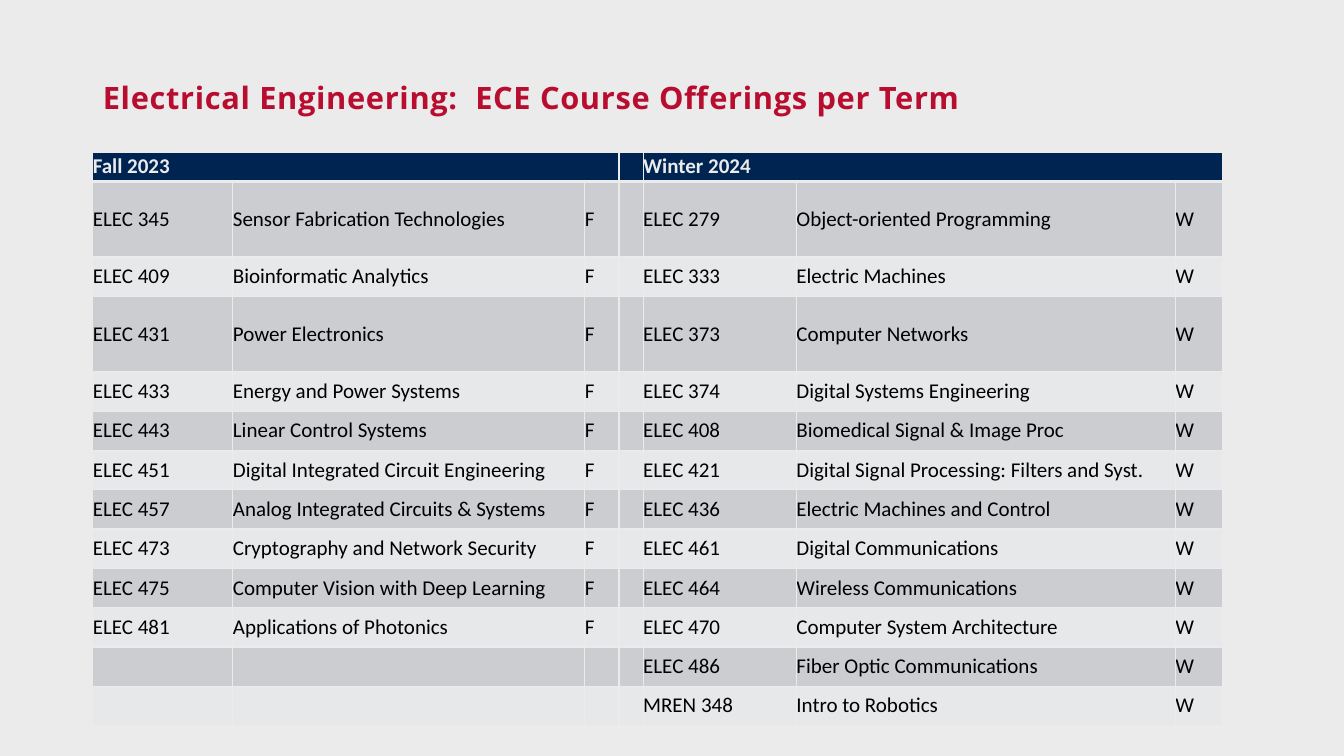
from dataclasses import dataclass
from itertools import zip_longest

from lxml.etree import SubElement
from pptx import Presentation
from pptx.dml.color import RGBColor
from pptx.enum.text import MSO_ANCHOR, PP_ALIGN
from pptx.oxml.ns import qn
from pptx.util import Inches, Pt


@dataclass(frozen=True)
class Theme:
    paper: str = "EBEBEC"
    red: str = "B90D30"
    navy: str = "002452"
    ink: str = "000000"
    bands: tuple = ("CCCDD1", "E7E8E9")
    title_font: str = "Open Sans"
    table_font: str = "Calibri"
    title_size: int = 22
    table_size: int = 15


THEME = Theme()

FALL = [
    ("ELEC 345", "Sensor Fabrication Technologies"),
    ("ELEC 409", "Bioinformatic Analytics"),
    ("ELEC 431", "Power Electronics"),
    ("ELEC 433", "Energy and Power Systems"),
    ("ELEC 443", "Linear Control Systems"),
    ("ELEC 451", "Digital Integrated Circuit Engineering"),
    ("ELEC 457", "Analog Integrated Circuits & Systems"),
    ("ELEC 473", "Cryptography and Network Security"),
    ("ELEC 475", "Computer Vision with Deep Learning"),
    ("ELEC 481", "Applications of Photonics"),
]
WINTER = [
    ("ELEC 279", "Object-oriented Programming"),
    ("ELEC 333", "Electric Machines"),
    ("ELEC 373", "Computer Networks"),
    ("ELEC 374", "Digital Systems Engineering"),
    ("ELEC 408", "Biomedical Signal & Image Proc"),
    ("ELEC 421", "Digital Signal Processing: Filters and Syst."),
    ("ELEC 436", "Electric Machines and Control"),
    ("ELEC 461", "Digital Communications"),
    ("ELEC 464", "Wireless Communications"),
    ("ELEC 470", "Computer System Architecture"),
    ("ELEC 486", "Fiber Optic Communications"),
    ("MREN 348", "Intro to Robotics"),
]
COLUMN_WIDTHS = [1.39, 3.49, 0.34, 0.24, 1.52, 3.76, 0.47]
HEADER_HEIGHT, ROW_HEIGHT, TALL_HEIGHT = 0.29, 0.39, 0.75
TALL_ROWS = (1, 3)


def style_run(run, font, size, color, bold):
    settings = {"name": font, "size": Pt(size), "bold": bold}
    for attribute, value in settings.items():
        setattr(run.font, attribute, value)
    run.font.color.rgb = RGBColor.from_string(color)


def set_borders(cell, **widths):
    """Draw cell borders in the paper colour; widths are points by side: L, R, T, B."""
    properties = cell._tc.get_or_add_tcPr()
    for side, width in widths.items():
        line = SubElement(properties, qn(f"a:ln{side}"), w=str(Pt(width)))
        fill = SubElement(line, qn("a:solidFill"))
        SubElement(fill, qn("a:srgbClr"), val=THEME.paper)


presentation = Presentation()
presentation.slide_width = Inches(13.33)
presentation.slide_height = Inches(7.5)
slide = presentation.slides.add_slide(presentation.slide_layouts[5])
slide.background.fill.solid()
slide.background.fill.fore_color.rgb = RGBColor.from_string(THEME.paper)

title = slide.shapes.title
title.left, title.top = Inches(0.92), Inches(0.61)
title.width, title.height = Inches(11.5), Inches(0.76)
title.text_frame.vertical_anchor = MSO_ANCHOR.MIDDLE
title.text_frame.word_wrap = True
heading = title.text_frame.paragraphs[0]
heading.alignment = PP_ALIGN.LEFT
heading.line_spacing = 0.9
heading_run = heading.add_run()
heading_run.text = "Electrical Engineering:  ECE Course Offerings per Term"
style_run(heading_run, THEME.title_font, THEME.title_size, THEME.red, True)
heading_run.font._element.set("spc", "50")

rows = [("Fall 2023", "", "", "", "Winter 2024", "", "")]
for fall, winter in zip_longest(FALL, WINTER):
    fall_cells = (*fall, "F") if fall else ("", "", "")
    rows.append((*fall_cells, "", *winter, "W"))

offerings = slide.shapes.add_table(
    len(rows), len(COLUMN_WIDTHS), Inches(0.92), Inches(1.51), Inches(11.21), Inches(5.7)
).table
offerings.horz_banding = False
for column, width in zip(offerings.columns, COLUMN_WIDTHS):
    column.width = Inches(width)

for r, texts in enumerate(rows):
    is_header = r == 0
    height = HEADER_HEIGHT if is_header else TALL_HEIGHT if r in TALL_ROWS else ROW_HEIGHT
    offerings.rows[r].height = Inches(height)
    fill_color = THEME.navy if is_header else THEME.bands[(r - 1) % 2]
    text_color = THEME.paper if is_header else THEME.ink
    for c, text in enumerate(texts):
        cell = offerings.cell(r, c)
        cell.margin_left = cell.margin_right = cell.margin_top = cell.margin_bottom = 0
        cell.vertical_anchor = MSO_ANCHOR.MIDDLE
        set_borders(cell, L=1, R=1, T=3 if r == 1 else 1, B=3 if is_header else 1)
        cell.fill.solid()
        cell.fill.fore_color.rgb = RGBColor.from_string(fill_color)
        paragraph = cell.text_frame.paragraphs[0]
        if text:
            run = paragraph.add_run()
            run.text = text
            style_run(run, THEME.table_font, THEME.table_size, text_color, is_header)
        else:
            # An empty cell would otherwise use 18 pt and stretch the header row.
            SubElement(paragraph._p, qn("a:endParaRPr"), sz=str(THEME.table_size * 100))

for first in (0, 4):
    offerings.cell(0, first).merge(offerings.cell(0, first + 2))

presentation.save("out.pptx")
